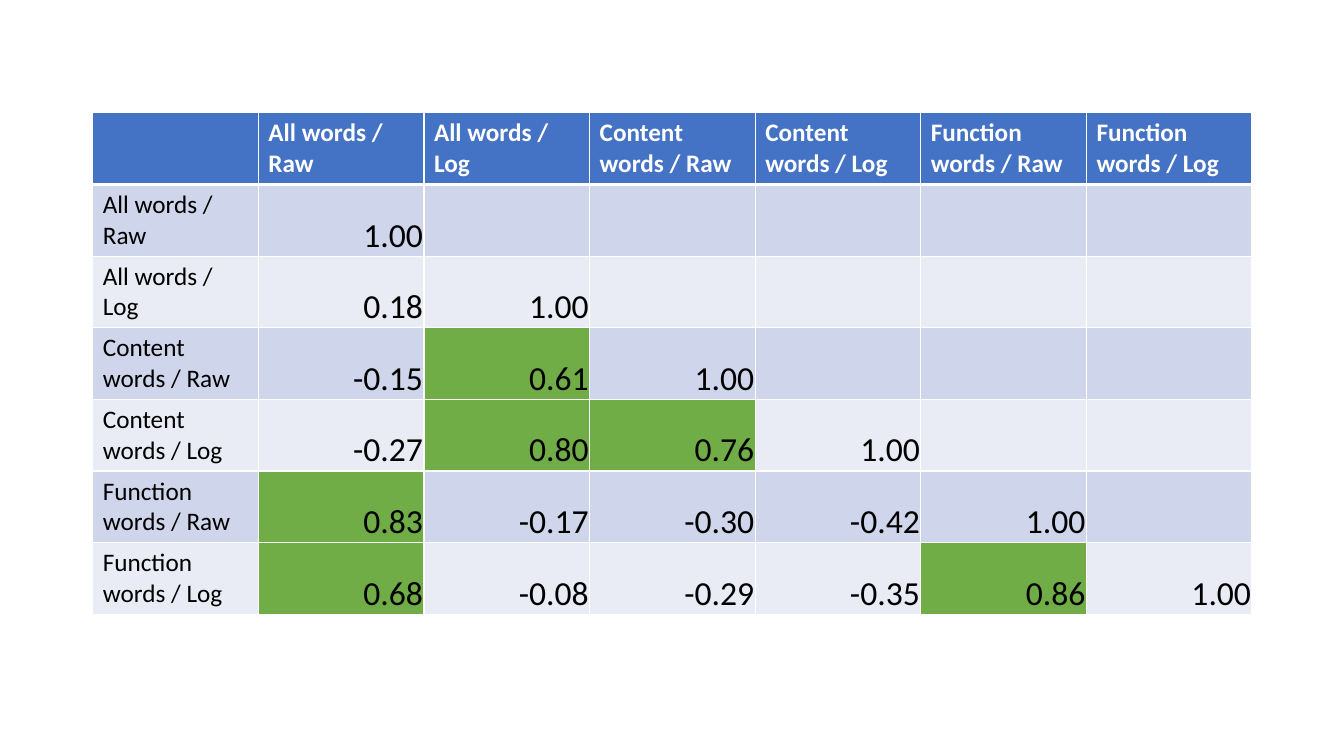
from lxml.etree import SubElement
from pptx import Presentation
from pptx.dml.color import RGBColor
from pptx.enum.text import MSO_ANCHOR as Anchor, PP_ALIGN as Align
from pptx.oxml.ns import qn
from pptx.util import Inches, Pt

HEADER, STRONG, WHITE, BLACK = "4472C4", "70AD47", "FFFFFF", "000000"
BANDS = ["CFD5EA", "E9EBF5"]
THRESHOLD = 0.6  # correlations from here up to 1 are highlighted

MEASURES = [f"{words} / {scale}"
            for words in ("All words", "Content words", "Function words")
            for scale in ("Raw", "Log")]
CORRELATIONS = [
    ["1.00"],
    ["0.18", "1.00"],
    ["-0.15", "0.61", "1.00"],
    ["-0.27", "0.80", "0.76", "1.00"],
    ["0.83", "-0.17", "-0.30", "-0.42", "1.00"],
    ["0.68", "-0.08", "-0.29", "-0.35", "0.86", "1.00"],
]


def write(cell, text, size, color, bold=False):
    run = cell.text_frame.paragraphs[0].add_run()
    run.text = text
    run.font.name = "Calibri"
    run.font.size = Pt(size)
    run.font.bold = bold
    run.font.color.rgb = RGBColor.from_string(color)


def paint(cell, fill, top=1, bottom=1):
    """Give the cell white borders (widths in points) and a solid fill."""
    properties = cell._tc.get_or_add_tcPr()
    for side, width in (("L", 1), ("R", 1), ("T", top), ("B", bottom)):
        line = SubElement(properties, qn(f"a:ln{side}"), w=str(Pt(width)))
        solid = SubElement(line, qn("a:solidFill"))
        SubElement(solid, qn("a:srgbClr"), val=WHITE)
    cell.fill.solid()
    cell.fill.fore_color.rgb = RGBColor.from_string(fill)


# Slide
presentation = Presentation()
presentation.slide_width = Inches(13.33)
presentation.slide_height = Inches(7.5)
slide = presentation.slides.add_slide(presentation.slide_layouts[6])

# Square table: one header row and column plus the measures
count = len(MEASURES) + 1
table = slide.shapes.add_table(count, count, Inches(0.92), Inches(1.12),
                               Inches(11.5), Inches(4.9)).table

# Header row
for column, label in enumerate([""] + MEASURES):
    cell = table.cell(0, column)
    paint(cell, HEADER, bottom=3)
    if label:
        write(cell, label, 18, WHITE, bold=True)

# Body: row label, then the lower triangle of correlations
for row, (label, values) in enumerate(zip(MEASURES, CORRELATIONS), start=1):
    band = BANDS[(row - 1) % 2]
    write(table.cell(row, 0), label, 18, BLACK)
    for column in range(count):
        cell = table.cell(row, column)
        fill = band
        if 1 <= column <= len(values):
            value = values[column - 1]
            if THRESHOLD <= float(value) < 1:
                fill = STRONG
            write(cell, value, 24, BLACK)
            cell.text_frame.paragraphs[0].alignment = Align.RIGHT
            cell.vertical_anchor = Anchor.BOTTOM
            cell.margin_left = cell.margin_right = cell.margin_top = Inches(0.01)
            cell.margin_bottom = 0
        paint(cell, fill, top=3 if row == 1 else 1)

presentation.save("out.pptx")
